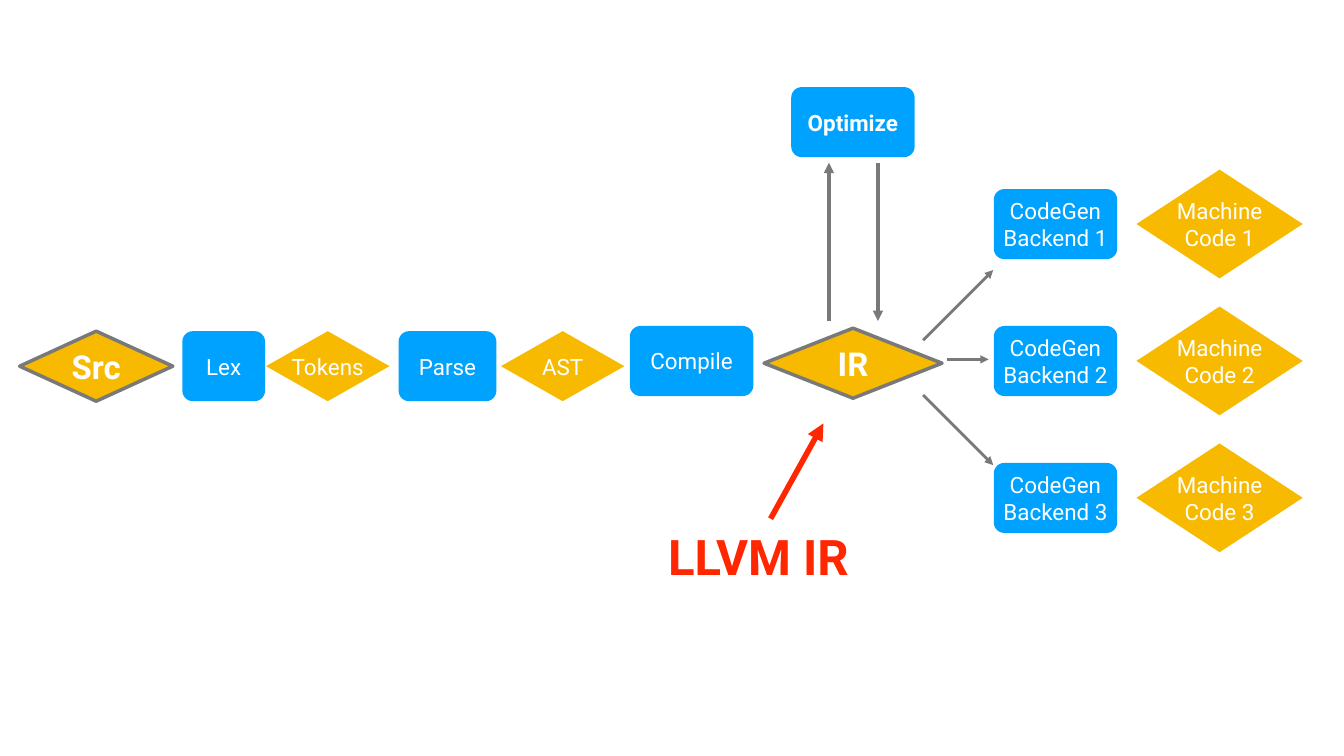
import dataclasses

import lxml.etree
import pptx
import pptx.dml.color
import pptx.enum.shapes
import pptx.enum.text
import pptx.oxml.ns
import pptx.util

Cm = pptx.util.Cm
Pt = pptx.util.Pt
qn = pptx.oxml.ns.qn


@dataclasses.dataclass(frozen=True)
class Theme:
    font: str = "Roboto"
    stage: str = "00A2FF"
    data: str = "F7BA01"
    gray: str = "797979"
    red: str = "FF2600"
    white: str = "FFFFFF"
    body: int = 32
    strong: int = 47
    callout: int = 70


T = Theme()
ROW_TOP = 16.69
BOX_H = 3.53
BOX_W = 6.22
BACKEND_STEP = 6.9


def rgb(color):
    return pptx.dml.color.RGBColor.from_string(color)


def write(tf, text, size=T.body, color=T.white, bold=False, inset=0.0, wrap=True):
    tf.word_wrap = wrap
    tf.vertical_anchor = pptx.enum.text.MSO_ANCHOR.MIDDLE
    tf.margin_left = tf.margin_right = tf.margin_top = tf.margin_bottom = Cm(inset)
    for i, line in enumerate(text.split("\n")):
        p = tf.add_paragraph() if i else tf.paragraphs[0]
        p.alignment = pptx.enum.text.PP_ALIGN.CENTER
        r = p.add_run()
        r.text = line
        r.font.name = T.font
        r.font.size = Pt(size)
        r.font.bold = bold
        r.font.color.rgb = rgb(color)


def paint(sp, fill, outline=None):
    sp.shadow.inherit = False
    sp.fill.solid()
    sp.fill.fore_color.rgb = rgb(fill)
    if outline:
        sp.line.color.rgb = rgb(outline)
        sp.line.width = Pt(5)
    else:
        sp.line.fill.background()


def stage(s, text, x, y, w=BOX_W, **fmt):
    kind = pptx.enum.shapes.MSO_SHAPE.ROUNDED_RECTANGLE
    sp = s.shapes.add_shape(kind, Cm(x), Cm(y), Cm(w), Cm(BOX_H))
    sp.adjustments[0] = 0.15
    paint(sp, T.stage)
    write(sp.text_frame, text, **fmt)


def diamond(s, text, x, y, w=BOX_W, h=BOX_H, outline=None, **fmt):
    fb = s.shapes.build_freeform(Cm(x), Cm(y + h / 2))
    fb.add_line_segments([
        (Cm(x + w / 2), Cm(y + h)),
        (Cm(x + w), Cm(y + h / 2)),
        (Cm(x + w / 2), Cm(y)),
    ], close=True)
    sp = fb.convert_to_shape()
    paint(sp, T.data, outline)
    write(sp.text_frame, text, **fmt)


def arrow(s, x1, y1, x2, y2, width, color=T.gray):
    kind = pptx.enum.shapes.MSO_CONNECTOR.STRAIGHT
    c = s.shapes.add_connector(kind, Cm(x1), Cm(y1), Cm(x2), Cm(y2))
    c.line.color.rgb = rgb(color)
    c.line.width = Pt(width)
    ln = c.line._get_or_add_ln()
    lxml.etree.SubElement(ln, qn("a:tailEnd"), type="triangle")
    lxml.etree.SubElement(c._element.spPr, qn("a:effectLst"))


def front_end(s):
    diamond(s, "Src", 0.99, ROW_TOP, w=7.72, outline=T.gray, size=T.strong, bold=True)
    stage(s, "Lex", 9.19, ROW_TOP, w=4.17)
    diamond(s, "Tokens", 13.41, ROW_TOP)
    stage(s, "Parse", 20.09, ROW_TOP, w=4.93)
    diamond(s, "AST", 25.25, ROW_TOP)
    stage(s, "Compile", 31.75, 16.43)


def optimizer(s):
    diamond(s, "IR", 38.51, 16.54, w=8.97, outline=T.gray, size=T.strong, bold=True)
    stage(s, "Optimize", 39.88, 4.39, bold=True)
    arrow(s, 41.78, 16.18, 41.78, 8.2, 5)
    arrow(s, 44.25, 8.2, 44.25, 16.18, 5)


def back_ends(s):
    for i in range(3):
        dy = i * BACKEND_STEP
        stage(s, f"CodeGen\nBackend {i + 1}", 50.09, 9.53 + dy)
        diamond(s, f"Machine\nCode {i + 1}", 57.28, 8.55 + dy, w=8.38, h=5.48)
    arrow(s, 46.53, 17.15, 50.06, 13.61, 4)
    arrow(s, 47.75, 18.11, 49.83, 18.11, 4)
    arrow(s, 46.53, 19.91, 50.06, 23.44, 4)


def callout(s):
    tb = s.shapes.add_textbox(Cm(33.22), Cm(26.44), Cm(10.01), Cm(3.2))
    write(tb.text_frame, "LLVM IR", size=T.callout, color=T.red, bold=True,
          inset=0.15, wrap=False)
    arrow(s, 38.84, 26.14, 41.5, 21.34, 8, T.red)


def main():
    prs = pptx.Presentation()
    prs.slide_width = Cm(67.74)
    prs.slide_height = Cm(38.1)
    s = prs.slides.add_slide(prs.slide_layouts[6])
    front_end(s)
    optimizer(s)
    back_ends(s)
    callout(s)
    prs.save("out.pptx")


if __name__ == "__main__":
    main()
